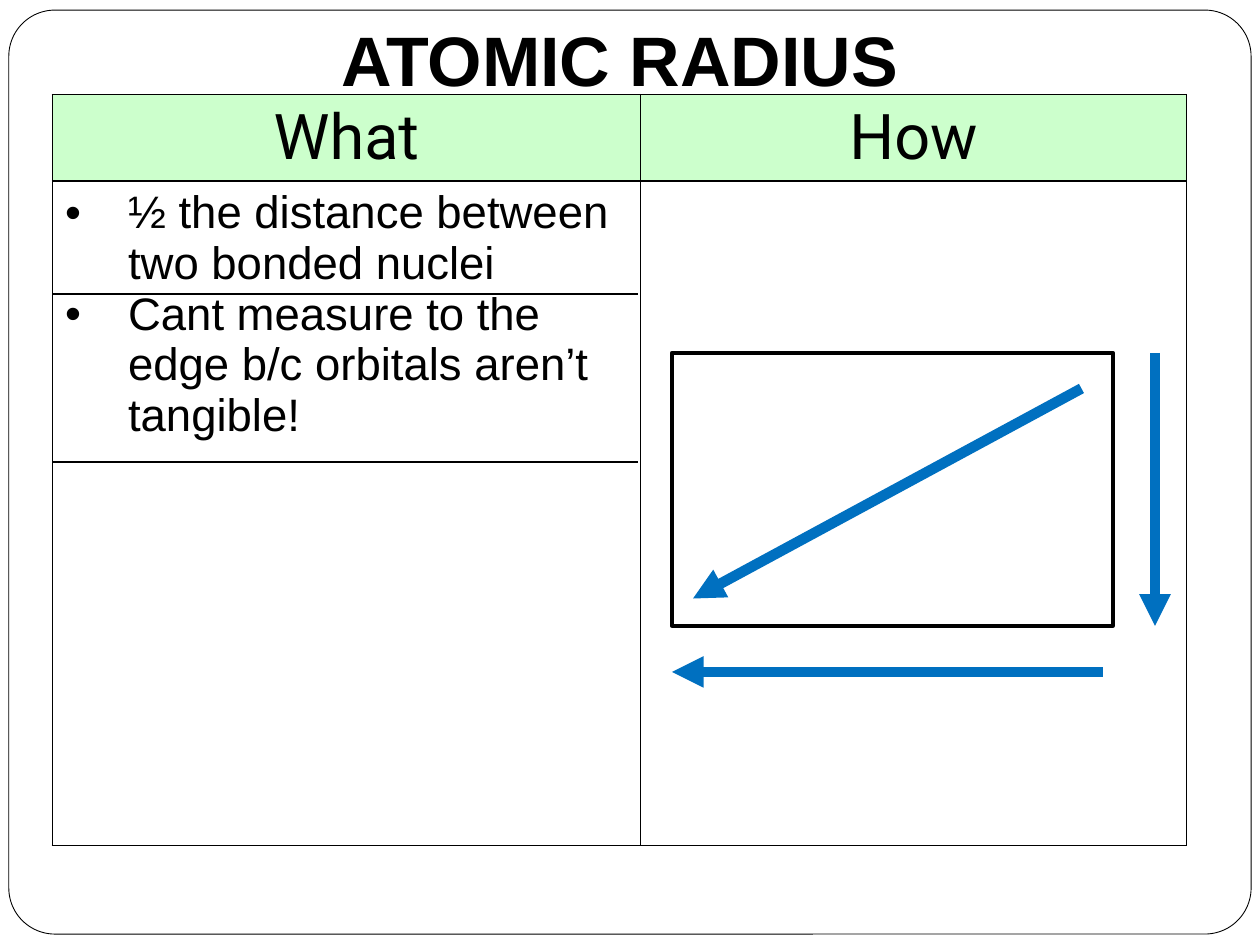
from lxml.etree import SubElement
from pptx import Presentation
from pptx.dml.color import RGBColor as RGB
from pptx.enum.shapes import MSO_CONNECTOR as Link, MSO_SHAPE as Shape
from pptx.enum.text import MSO_ANCHOR as Anchor, MSO_AUTO_SIZE as Fit, PP_ALIGN as Align
from pptx.oxml.ns import qn
from pptx.util import Inches, Pt

HUES = {"ink": "000000", "paper": "FFFFFF", "head": "CCFFCC", "arrow": "0070C0"}
INK = RGB.from_string(HUES["ink"])

deck = Presentation()
deck.slide_width, deck.slide_height = Inches(10), Inches(7.5)
COL, ROW = deck.slide_width / 120, deck.slide_height / 90
slide = deck.slides.add_slide(deck.slide_layouts[5])
shapes = slide.shapes


def area(x, y, wide, high):
    """Turn grid columns and rows into a left, top, width and height."""
    return int(x * COL), int(y * ROW), int(wide * COL), int(high * ROW)


def style(par, size, face, bold=False):
    for run in par.runs:
        run.font.size, run.font.name, run.font.bold = Pt(size), face, bold
        run.font.color.rgb = INK


# Rounded frame, behind everything
frame = shapes.add_shape(Shape.ROUNDED_RECTANGLE, *area(0.84, 0.96, 118.32, 88))
frame.adjustments[0] = 0.05
frame.shadow.inherit = False
frame.fill.solid()
frame.fill.fore_color.rgb = RGB.from_string(HUES["paper"])
frame.line.color.rgb, frame.line.width = INK, Pt(0.5)
title = shapes.title
title._element.addprevious(frame._element)

# Title
title.left, title.top, title.width, title.height = area(4, 2, 110, 8.8)
text = title.text_frame
text.text = "ATOMIC RADIUS"
text.auto_size, text.vertical_anchor = Fit.NONE, Anchor.BOTTOM
text.margin_bottom = Inches(0.1)
text.paragraphs[0].alignment = Align.CENTER
style(text.paragraphs[0], 40, "Arial", True)

# Table
table = shapes.add_table(2, 2, *area(5, 9, 108, 71.5)).table
table.first_row = table.horz_banding = False
for part, wide in zip(table.columns, (56, 52)):
    part.width = int(wide * COL)
for part, high in zip(table.rows, (8.2, 63.3)):
    part.height = int(high * ROW)

for cell, word in zip(table.rows[0].cells, ("What", "How")):
    cell.text = word
    cell.fill.solid()
    cell.fill.fore_color.rgb = RGB.from_string(HUES["head"])
    par = cell.text_frame.paragraphs[0]
    par.alignment = Align.CENTER
    style(par, 36, "Roboto")

for cell in table.rows[1].cells:
    cell.fill.background()
notes = table.cell(1, 0)
notes.text = ("½ the distance between two bonded nuclei\n"
              "Cant measure to the edge b/c orbitals aren’t tangible!")
for par in notes.text_frame.paragraphs:
    props = par._p.get_or_add_pPr()
    props.set("marL", str(Inches(0.5)))
    props.set("indent", str(-Inches(0.5)))
    SubElement(props, qn("a:buFont")).set("typeface", "Arial")
    SubElement(props, qn("a:buChar")).set("char", "•")
    style(par, 26, "Arial")

for cell in table.iter_cells():
    props = cell._tc.get_or_add_tcPr()
    for spot, side in enumerate(("lnL", "lnR", "lnT", "lnB")):
        edge = SubElement(props, qn(f"a:{side}"), w=str(Pt(1)))
        fill = SubElement(edge, qn("a:solidFill"))
        SubElement(fill, qn("a:srgbClr")).set("val", HUES["ink"])
        props.insert(spot, edge)

# Box standing for the periodic table
box = shapes.add_shape(Shape.RECTANGLE, *area(64, 33.6, 42, 26))
box.shadow.inherit = False
box.fill.background()
box.line.color.rgb, box.line.width = INK, Pt(2.25)

# Trend arrows, then rules under the notes
lines = [
    (105, 64, 64, 64, "arrow"),
    (110, 33.6, 110, 59.6, "arrow"),
    (103, 37, 66, 57, "arrow"),
    (5, 28, 60.8, 28, "ink"),
    (5, 44, 60.8, 44, "ink"),
]
for x1, y1, x2, y2, hue in lines:
    line = shapes.add_connector(Link.STRAIGHT, *area(x1, y1, x2, y2))
    line.line.color.rgb = RGB.from_string(HUES[hue])
    line.line.width = Pt(6 if hue == "arrow" else 0.75)
    if hue == "arrow":
        SubElement(line.line._get_or_add_ln(), qn("a:tailEnd")).set("type", "triangle")
    SubElement(line._element.spPr, qn("a:effectLst"))

deck.save("out.pptx")
